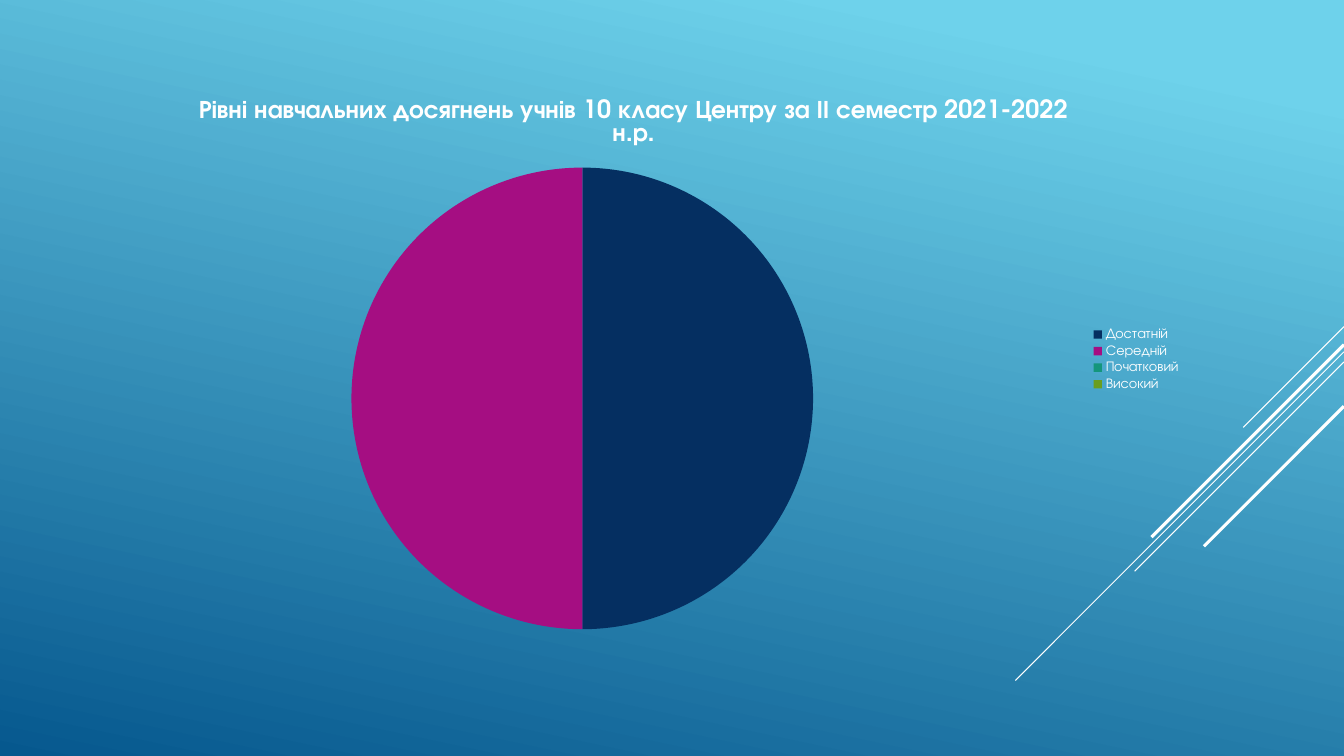
from lxml.etree import SubElement
from pptx import Presentation
from pptx.chart.data import CategoryChartData
from pptx.dml.color import RGBColor
from pptx.enum.chart import XL_CHART_TYPE, XL_LEGEND_POSITION
from pptx.enum.shapes import MSO_CONNECTOR
from pptx.oxml.ns import qn
from pptx.util import Pt

COLORS = {
    "white": "FFFFFF",
    "sky": "6ED2EB",
    "deep": "06588E",
    "navy": "052F61",
    "magenta": "A50E82",
    "teal": "14967C",
    "olive": "6A9E1F",
}
SLIDE_W, SLIDE_H = 960, 540
TITLE = "Рівні навчальних досягнень учнів 10 класу Центру за ІІ семестр 2021-2022 н.р."
LEVELS = [
    ("Достатній", 50, "navy"),
    ("Середній", 50, "magenta"),
    ("Початковий", 0, "teal"),
    ("Високий", 0, "olive"),
]
DIAGONALS = [
    (233.3, 72, 0.75),
    (251.3, 234.7, 0.75),
    (258.5, 149.5, 0.75),
    (246.2, 137.5, 2.25),
    (290.2, 100, 2.25),
]


class Deck:
    font = "TeX Gyre Adventor"

    def __init__(self, prs):
        self.slide = prs.slides.add_slide(prs.slide_layouts[6])

    def color(self, name):
        return RGBColor.from_string(COLORS[name])

    def style(self, font, size, bold=False):
        font.name = self.font
        font.size = Pt(size)
        font.bold = bold
        font.color.rgb = self.color("white")

    def background(self, start, end, angle):
        fill = self.slide.background.fill
        fill.gradient()
        fill.gradient_angle = 360 - angle
        for stop, (name, position) in zip(fill.gradient_stops, (start, end)):
            stop.color.rgb = self.color(name)
            stop.position = position

    def diagonal(self, top, run, width):
        line = self.slide.shapes.add_connector(
            MSO_CONNECTOR.STRAIGHT, Pt(SLIDE_W), Pt(top), Pt(SLIDE_W - run), Pt(top + run)
        )
        line.line.color.rgb = self.color("white")
        line.line.width = Pt(width)
        SubElement(line._element.spPr, qn("a:effectLst"))

    def pie(self, x, y, w, h, title, levels):
        data = CategoryChartData()
        data.categories = [name for name, _, _ in levels]
        data.add_series("Series 1", [value for _, value, _ in levels])
        chart = self.slide.shapes.add_chart(
            XL_CHART_TYPE.PIE, Pt(x), Pt(y), Pt(w), Pt(h), data
        ).chart
        self.style(chart.font, 10)

        chart.has_title = True
        tf = chart.chart_title.text_frame
        tf.text = title
        self.style(tf.paragraphs[0].runs[0].font, 18, bold=True)
        chart.chart_title.include_in_layout = False

        chart.has_legend = True
        chart.legend.position = XL_LEGEND_POSITION.RIGHT
        chart.legend.include_in_layout = False

        plot = chart.plots[0]
        plot.vary_by_categories = True
        for i, (_, _, name) in enumerate(levels):
            fill = plot.series[0].points[i].format.fill
            fill.solid()
            fill.fore_color.rgb = self.color(name)


def main():
    prs = Presentation()
    prs.slide_width, prs.slide_height = Pt(SLIDE_W), Pt(SLIDE_H)
    deck = Deck(prs)
    deck.background(("sky", 0.1), ("deep", 1), 102)
    for top, run, width in DIAGONALS:
        deck.diagonal(top, run, width)
    deck.pie(54, 54, 797, 405.4, TITLE, LEVELS)
    prs.save("out.pptx")


if __name__ == "__main__":
    main()
